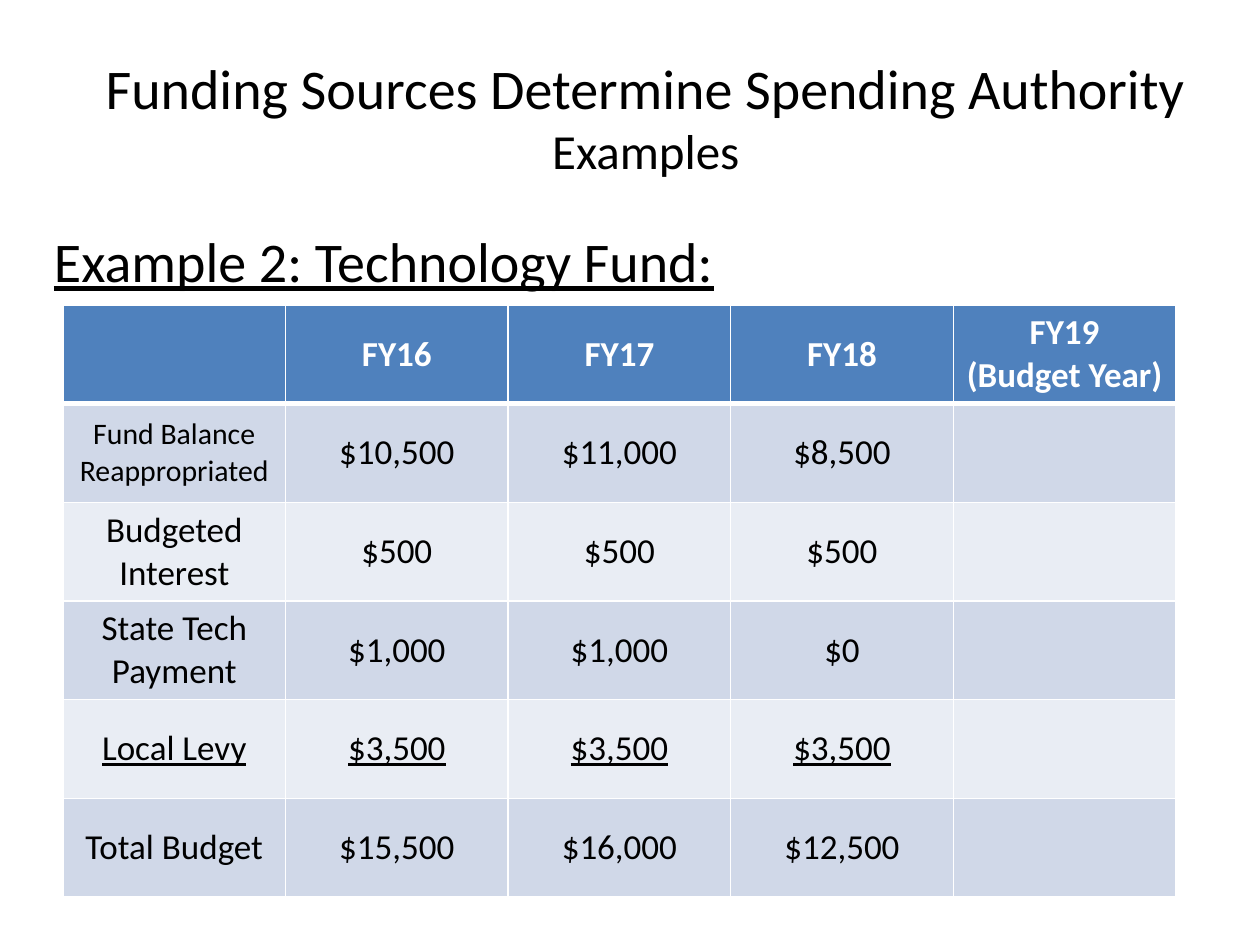
from dataclasses import dataclass

from lxml import etree
from pptx import Presentation
from pptx.dml.color import RGBColor
from pptx.enum import text as tx
from pptx.oxml import ns
from pptx.util import Pt

FONT = "Calibri"
BLACK = RGBColor(0x00, 0x00, 0x00)
WHITE = RGBColor(0xFF, 0xFF, 0xFF)
HEADER_BLUE = RGBColor(0x4F, 0x81, 0xBD)
BANDS = (RGBColor(0xD0, 0xD8, 0xE8), RGBColor(0xE9, 0xED, 0xF4))

COLUMN_WIDTH = Pt(127.2)
ROW_HEIGHT = Pt(56.4)
THIN, THICK = Pt(1), Pt(3)


@dataclass(frozen=True)
class Style:
    size: float = 20
    color: RGBColor = BLACK
    bold: bool = False
    underline: bool = False


@dataclass(frozen=True)
class BudgetLine:
    label: str
    amounts: tuple[str, ...]
    label_size: float = 20
    underline: bool = False


YEARS = ("", "FY16", "FY17", "FY18", "FY19\v(Budget Year)")
BUDGET = (
    BudgetLine("Fund Balance\nReappropriated", ("$10,500", "$11,000", "$8,500"), label_size=17),
    BudgetLine("Budgeted Interest", ("$500", "$500", "$500")),
    BudgetLine("State Tech Payment", ("$1,000", "$1,000", "$0")),
    BudgetLine("Local Levy", ("$3,500", "$3,500", "$3,500"), underline=True),
    BudgetLine("Total Budget", ("$15,500", "$16,000", "$12,500")),
)


def style_paragraph(paragraph, style: Style, align) -> None:
    paragraph.alignment = align
    for run in paragraph.runs:
        font = run.font
        font.name, font.size = FONT, Pt(style.size)
        font.bold, font.underline = style.bold, style.underline
        font.color.rgb = style.color


def add_text(slide, left: float, top: float, width: float, height: float,
             lines: dict[str, Style], align, anchor) -> None:
    box = slide.shapes.add_textbox(Pt(left), Pt(top), Pt(width), Pt(height))
    frame = box.text_frame
    frame.word_wrap = True
    frame.vertical_anchor = anchor
    frame.text = "\n".join(lines)
    for paragraph, style in zip(frame.paragraphs, lines.values()):
        style_paragraph(paragraph, style, align)


def add_borders(cell, top: int, bottom: int) -> None:
    """Draw white cell edges; must run before the cell is filled."""
    properties = cell._tc.get_or_add_tcPr()
    for side, width in (("L", THIN), ("R", THIN), ("T", top), ("B", bottom)):
        line = etree.SubElement(properties, ns.qn(f"a:ln{side}"), w=str(width))
        fill = etree.SubElement(line, ns.qn("a:solidFill"))
        etree.SubElement(fill, ns.qn("a:srgbClr"), val=str(WHITE))


def fill_cell(cell, content: str, style: Style, fill: RGBColor,
              top: int = THIN, bottom: int = THIN) -> None:
    add_borders(cell, top, bottom)
    cell.fill.solid()
    cell.fill.fore_color.rgb = fill
    cell.vertical_anchor = tx.MSO_ANCHOR.MIDDLE
    cell.text_frame.text = content
    for paragraph in cell.text_frame.paragraphs:
        style_paragraph(paragraph, style, tx.PP_ALIGN.CENTER)


def add_budget_table(slide) -> None:
    rows, columns = len(BUDGET) + 1, len(YEARS)
    table = slide.shapes.add_table(rows, columns, Pt(36), Pt(174.24),
                                   COLUMN_WIDTH * columns, ROW_HEIGHT * rows).table
    for column in table.columns:
        column.width = COLUMN_WIDTH
    for row in table.rows:
        row.height = ROW_HEIGHT

    for column, year in enumerate(YEARS):
        fill_cell(table.cell(0, column), year, Style(color=WHITE, bold=True),
                  HEADER_BLUE, bottom=THICK)

    for row, line in enumerate(BUDGET, start=1):
        budget_year = ""
        for column, content in enumerate((line.label, *line.amounts, budget_year)):
            size = line.label_size if column == 0 else 20
            fill_cell(table.cell(row, column), content,
                      Style(size, underline=line.underline),
                      BANDS[(row - 1) % 2], top=THICK if row == 1 else THIN)


def main() -> None:
    deck = Presentation()
    deck.slide_width, deck.slide_height = Pt(720), Pt(540)
    slide = deck.slides.add_slide(deck.slide_layouts[6])

    add_text(slide, 23.76, 126, 678.24, 356.4,
             {"Example 2: Technology Fund:": Style(32, underline=True)},
             tx.PP_ALIGN.LEFT, tx.MSO_ANCHOR.TOP)
    add_budget_table(slide)
    add_text(slide, 36, 21.6, 666, 90,
             {"Funding Sources Determine Spending Authority": Style(32),
              "Examples": Style(28)},
             tx.PP_ALIGN.CENTER, tx.MSO_ANCHOR.MIDDLE)

    deck.save("out.pptx")


if __name__ == "__main__":
    main()
